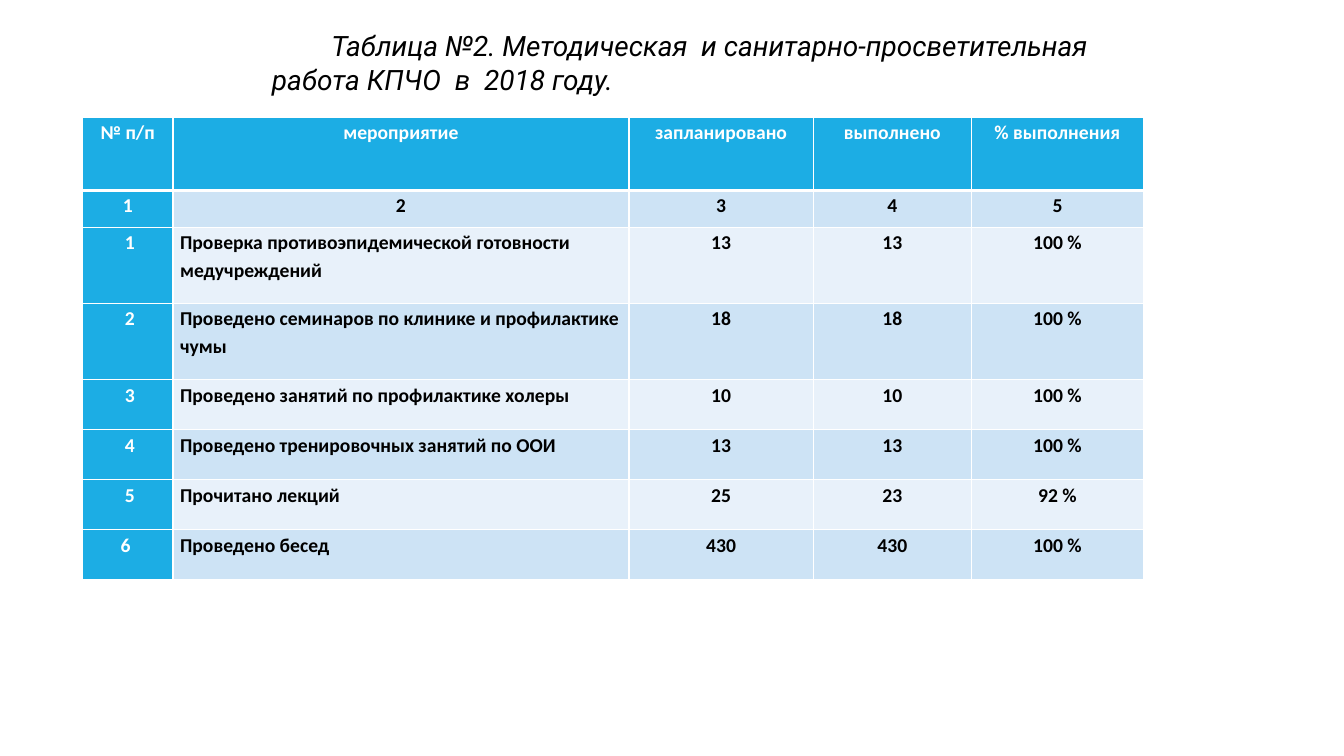
import pptx
import pptx.dml.color
import pptx.enum.text
import pptx.oxml
import pptx.oxml.ns
import pptx.util
from pptx.util import Cm

WHITE = pptx.dml.color.RGBColor(0xFF, 0xFF, 0xFF)
BLACK = pptx.dml.color.RGBColor(0x00, 0x00, 0x00)
ACCENT = pptx.dml.color.RGBColor(0x1C, 0xAD, 0xE4)
BAND_DARK = pptx.dml.color.RGBColor(0xCD, 0xE3, 0xF5)
BAND_LIGHT = pptx.dml.color.RGBColor(0xE8, 0xF1, 0xFA)

HEADING = "Таблица №2. Методическая  и санитарно-просветительная работа КПЧО  в  2018 году."
ACTIVITIES = [
    ("№ п/п", "мероприятие", "запланировано", "выполнено", "% выполнения"),
    ("1", "2", "3", "4", "5"),
    (" 1", "Проверка противоэпидемической готовности медучреждений", "13", "13", "100 %"),
    (" 2", "Проведено семинаров по клинике и профилактике чумы", "18", "18", "100 %"),
    (" 3", "Проведено занятий по профилактике холеры", "10", "10", "100 %"),
    (" 4", "Проведено тренировочных занятий по ООИ", "13", "13", "100 %"),
    (" 5", "Прочитано лекций", "25", "23", "92 %"),
    ("6 ", "Проведено бесед", "430", "430", "100 %"),
]
COLUMN_WIDTHS = [2.28, 11.49, 4.65, 3.98, 4.34]
ROW_HEIGHTS = [1.85, 0.93, 1.92, 1.92, 1.26, 1.26, 1.26, 1.26]


def style_font(paragraph, name, size, color):
    paragraph.font.name = name
    paragraph.font.size = pptx.util.Pt(size)
    paragraph.font.color.rgb = color


def set_heading(heading):
    heading.left, heading.top = Cm(6.6), Cm(0.56)
    heading.width, heading.height = Cm(22.86), Cm(2.74)
    frame = heading.text_frame
    frame.text = HEADING
    frame.word_wrap = True
    frame.auto_size = pptx.enum.text.MSO_AUTO_SIZE.NONE
    frame.vertical_anchor = pptx.enum.text.MSO_ANCHOR.TOP
    frame.margin_top = Cm(0.16)
    paragraph = frame.paragraphs[0]
    paragraph.alignment = pptx.enum.text.PP_ALIGN.LEFT
    style_font(paragraph, "Roboto", 20, BLACK)
    paragraph.font.italic = True
    properties = paragraph._p.get_or_add_pPr()
    properties.set("marL", "0")
    properties.set("indent", str(Cm(1.5)))


def set_borders(cell, widths):
    properties = cell._tc.get_or_add_tcPr()
    for position, (side, width) in enumerate(zip("LRTB", widths)):
        border = pptx.oxml.parse_xml(
            f'<a:ln{side} {pptx.oxml.ns.nsdecls("a")} w="{pptx.util.Pt(width)}">'
            f'<a:solidFill><a:srgbClr val="{WHITE}"/></a:solidFill></a:ln{side}>'
        )
        properties.insert(position, border)


def fill_cell(cell, text, row, column):
    is_header = row == 0
    is_accent = is_header or column == 0
    cell.text = text
    cell.margin_left = cell.margin_right = Cm(0.18)
    cell.margin_top = cell.margin_bottom = 0
    paragraph = cell.text_frame.paragraphs[0]
    is_activity = column == 1 and row > 1
    align = pptx.enum.text.PP_ALIGN
    paragraph.alignment = align.LEFT if is_activity else align.CENTER
    paragraph.line_spacing = 1.15
    paragraph.space_after = pptx.util.Pt(6 if is_header else 0)
    style_font(paragraph, "Calibri", 14, WHITE if is_accent else BLACK)
    paragraph.font.bold = True
    band = BAND_DARK if row % 2 else BAND_LIGHT
    cell.fill.solid()
    cell.fill.fore_color.rgb = ACCENT if is_accent else band
    set_borders(cell, (1, 1, 3 if row == 1 else 1, 3 if is_header else 1))


def add_activity_table(slide):
    table = slide.shapes.add_table(
        len(ROW_HEIGHTS), len(COLUMN_WIDTHS), Cm(2.08), Cm(2.95),
        Cm(sum(COLUMN_WIDTHS)), Cm(sum(ROW_HEIGHTS)),
    ).table
    for column, width in zip(table.columns, COLUMN_WIDTHS):
        column.width = Cm(width)
    for row, height in zip(table.rows, ROW_HEIGHTS):
        row.height = Cm(height)
    for row, texts in enumerate(ACTIVITIES):
        for column, text in enumerate(texts):
            fill_cell(table.cell(row, column), text, row, column)


def main():
    deck = pptx.Presentation()
    deck.slide_width, deck.slide_height = Cm(33.87), Cm(19.05)
    slide = deck.slides.add_slide(deck.slide_layouts[5])
    set_heading(slide.shapes.title)
    add_activity_table(slide)
    deck.save("out.pptx")


if __name__ == "__main__":
    main()
